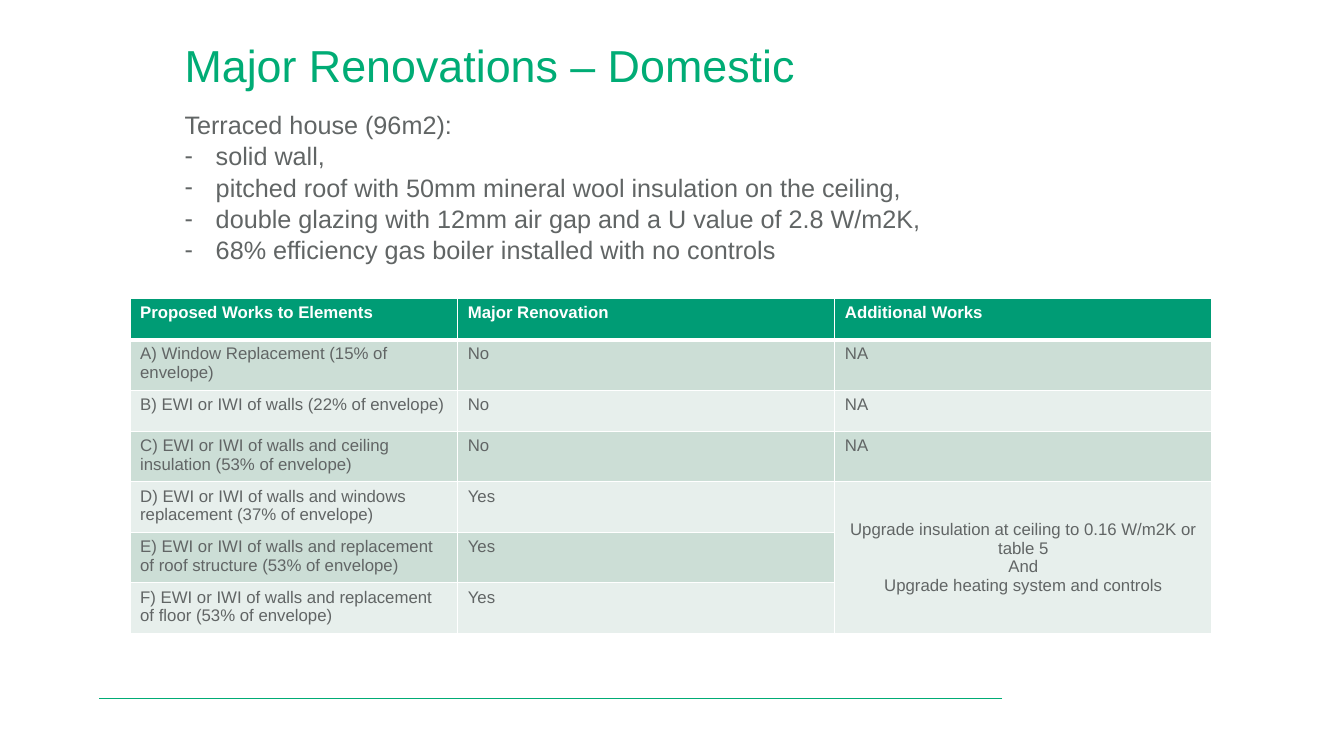
import lxml.etree
import pptx
import pptx.dml.color
import pptx.enum.shapes
import pptx.enum.text
import pptx.oxml
import pptx.oxml.ns
import pptx.util

Inches = pptx.util.Inches
Pt = pptx.util.Pt
qn = pptx.oxml.ns.qn
ALIGN = pptx.enum.text.PP_ALIGN
ANCHOR = pptx.enum.text.MSO_ANCHOR
AUTO_SIZE = pptx.enum.text.MSO_AUTO_SIZE

GREEN, HEADER_GREEN, GREY, WHITE = "00AC75", "009C75", "616565", "FFFFFF"
BANDS = ["CCDED6", "E7EFEC"]
COLUMN_WIDTHS = [3.25, 3.74, 3.74]
ROW_HEIGHT = 0.41

HOUSE = "Terraced house (96m2):"
FEATURES = [
    "solid wall,",
    "pitched roof with 50mm mineral wool insulation on the ceiling,",
    "double glazing with 12mm air gap and a U value of 2.8 W/m2K,",
    "68% efficiency gas boiler installed with no controls",
]
HEADINGS = ["Proposed Works to Elements", "Major Renovation", "Additional Works"]
UPGRADES = ("Upgrade insulation at ceiling to 0.16 W/m2K or table 5\n"
            "And\nUpgrade heating system and controls")
WORKS = [
    ["A) Window Replacement (15% of envelope)", "No", "NA"],
    ["B) EWI or IWI of walls (22% of envelope)", "No", "NA"],
    ["C) EWI or IWI of walls and ceiling insulation (53% of envelope)", "No", "NA"],
    ["D) EWI or IWI of walls and windows replacement (37% of envelope)", "Yes", UPGRADES],
    ["E) EWI or IWI of walls and replacement of roof structure (53% of envelope)", "Yes", ""],
    ["F) EWI or IWI of walls and replacement of floor (53% of envelope)", "Yes", ""],
]


def rgb(code):
    """Return the colour for a hex string."""
    return pptx.dml.color.RGBColor.from_string(code)


def apply(target, values):
    """Set each attribute of the target from a dict of format values."""
    for name, value in values.items():
        setattr(target, name, value)


def style_font(paragraph, size, color, bold=False):
    """Format the font of a paragraph."""
    apply(paragraph.font, {"name": "Arial", "size": Pt(size), "bold": bold})
    paragraph.font.color.rgb = rgb(color)


def place(placeholder, left, top, width, height, auto_size):
    """Move a placeholder and anchor its text at the top."""
    apply(placeholder, {"left": Inches(left), "top": Inches(top),
                        "width": Inches(width), "height": Inches(height)})
    apply(placeholder.text_frame, {"word_wrap": True, "auto_size": auto_size,
                                   "vertical_anchor": ANCHOR.TOP})


def set_bullet(paragraph, char=None):
    """Give a paragraph a hanging bullet, or none."""
    indent = Inches(0.31) if char else 0
    properties = paragraph._p.get_or_add_pPr()
    properties.set("marL", str(indent))
    properties.set("indent", str(-indent))
    if char:
        lxml.etree.SubElement(properties, qn("a:buChar"), char=char)
    else:
        lxml.etree.SubElement(properties, qn("a:buNone"))


def fill_title(title):
    """Write the slide title."""
    place(title, 1.73, 0.32, 10.46, 0.9, AUTO_SIZE.NONE)
    title.text_frame.text = "Major Renovations – Domestic"
    heading = title.text_frame.paragraphs[0]
    heading.alignment = ALIGN.LEFT
    style_font(heading, 32, GREEN)


def fill_description(body):
    """Write the house description and its list of features."""
    place(body, 1.73, 1.02, 9.88, 1.62, AUTO_SIZE.SHAPE_TO_FIT_TEXT)
    body.text_frame.text = "\n".join([HOUSE] + FEATURES)
    for index, paragraph in enumerate(body.text_frame.paragraphs):
        set_bullet(paragraph, "-" if index else None)
        apply(paragraph, {"space_before": Pt(0), "line_spacing": 1.04})
        style_font(paragraph, 18, GREY)


def set_borders(cell, widths):
    """Draw white cell borders with the given widths in points."""
    properties = cell._tc.get_or_add_tcPr()
    for side, width in widths.items():
        border = lxml.etree.SubElement(properties, qn(f"a:ln{side}"), w=str(Pt(width)))
        solid = lxml.etree.SubElement(border, qn("a:solidFill"))
        lxml.etree.SubElement(solid, qn("a:srgbClr"), val=WHITE)


def format_cell(cell, text, row):
    """Write a table cell with the colours of its row."""
    header = row == 0
    set_borders(cell, {"L": 1, "R": 1, "T": 3 if row == 1 else 1, "B": 3 if header else 1})
    cell.fill.solid()
    cell.fill.fore_color.rgb = rgb(HEADER_GREEN if header else BANDS[(row - 1) % 2])
    cell.text = text
    for paragraph in cell.text_frame.paragraphs:
        style_font(paragraph, 12, WHITE if header else GREY, header)


def add_works_table(slide):
    """Add the table of proposed works."""
    rows = [HEADINGS] + WORKS
    frame = slide.shapes.add_table(
        len(rows), len(HEADINGS), Inches(1.29), Inches(2.96),
        Inches(sum(COLUMN_WIDTHS)), Inches(ROW_HEIGHT * len(rows)))
    table = frame.table
    for column, width in zip(table.columns, COLUMN_WIDTHS):
        column.width = Inches(width)
    for row, texts in enumerate(rows):
        table.rows[row].height = Inches(ROW_HEIGHT)
        for column, text in enumerate(texts):
            format_cell(table.cell(row, column), text, row)
    upgrades = table.cell(4, 2)
    upgrades.merge(table.cell(6, 2))
    upgrades.vertical_anchor = ANCHOR.MIDDLE
    for paragraph in upgrades.text_frame.paragraphs:
        paragraph.alignment = ALIGN.CENTER


def add_footer_rule(slide):
    """Add the thin green line at the foot of the slide."""
    rule = slide.shapes.add_connector(
        pptx.enum.shapes.MSO_CONNECTOR.STRAIGHT,
        Inches(9.94), Inches(6.93), Inches(0.98), Inches(6.93))
    rule.line.color.rgb = rgb(GREEN)
    rule.line.width = Pt(0.5)
    lxml.etree.SubElement(rule._element.spPr, qn("a:effectLst"))


def main():
    """Build the slide and save it."""
    presentation = pptx.Presentation()
    apply(presentation, {"slide_width": Inches(13.33), "slide_height": Inches(7.5)})
    slide = presentation.slides.add_slide(presentation.slide_layouts[1])
    add_footer_rule(slide)
    fill_title(slide.shapes.title)
    add_works_table(slide)
    fill_description(slide.placeholders[1])
    presentation.save("out.pptx")


if __name__ == "__main__":
    main()
